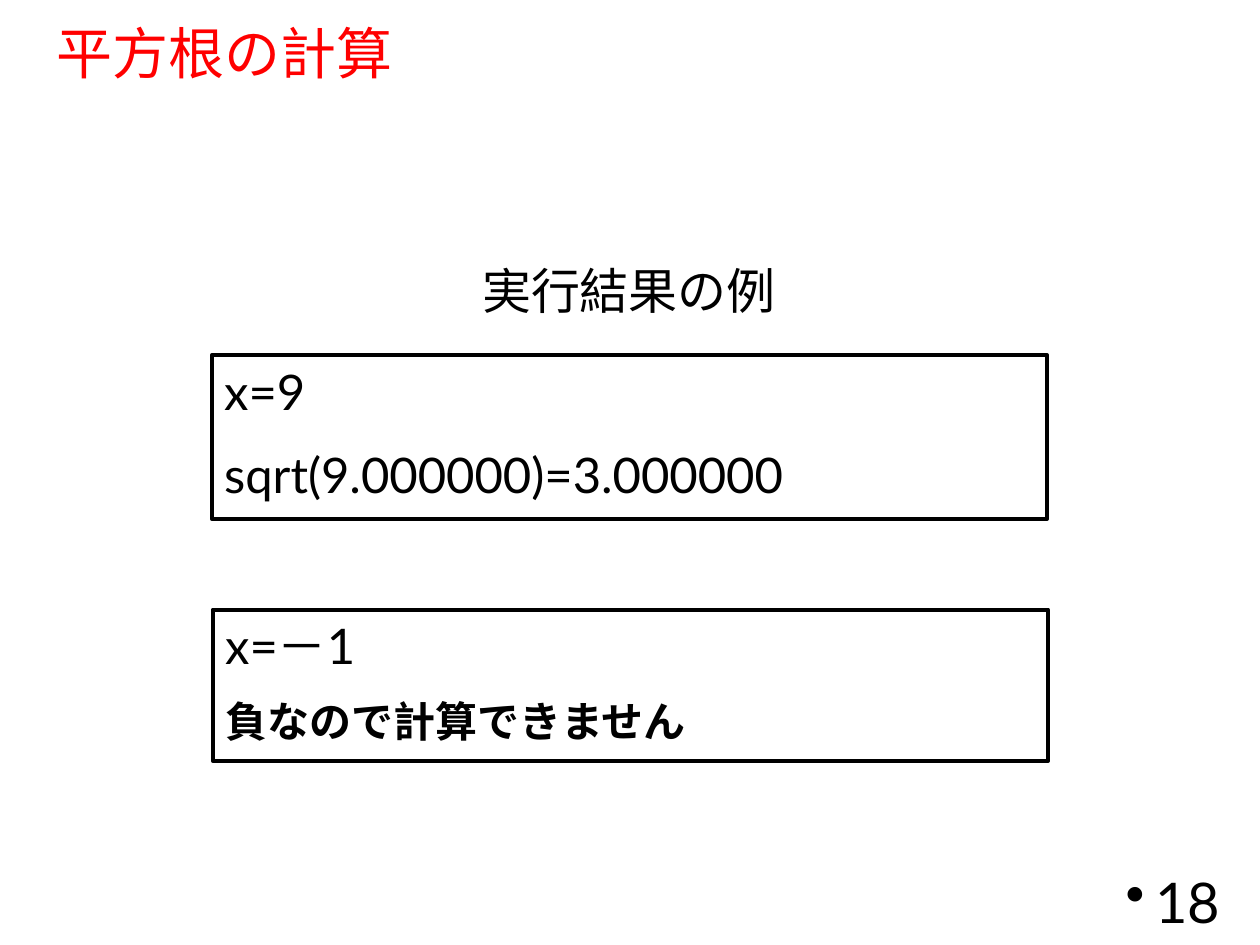
from dataclasses import dataclass

from lxml.etree import SubElement
from pptx import Presentation
from pptx.dml.color import RGBColor
from pptx.enum.shapes import MSO_SHAPE as Shape
from pptx.enum.text import MSO_ANCHOR as Anchor, PP_ALIGN as Align
from pptx.oxml.ns import qn
from pptx.util import Cm, Pt


@dataclass(frozen=True)
class Theme:
    font: str = "Lato"
    ink: RGBColor = RGBColor(0, 0, 0)
    accent: RGBColor = RGBColor(255, 0, 0)
    heading: int = 32
    body: int = 28
    message: int = 24
    border: float = 2.25


T = Theme()

TITLE = "平方根の計算"
CAPTION = "実行結果の例"
PAGE = "18"

# left, top, height in cm, then (text, size, bold) for each output line
BOX_WIDTH = 16.84
RESULTS = [
    (4.27, 7.16, 3.3, [("x=9", T.body, False),
                       ("sqrt(9.000000)=3.000000", T.body, False)]),
    (4.29, 12.29, 3.05, [("x=－1", T.body, False),
                         ("負なので計算できません", T.message, True)]),
]


def style(p, size, color=T.ink, bold=False):
    """Format every run, for Latin and East Asian characters alike."""
    for r in p.runs:
        r.font.name = T.font
        r.font.size = Pt(size)
        r.font.bold = bold
        r.font.color.rgb = color
        SubElement(r.font._element, qn("a:ea"), typeface=T.font)


def add_label(slide, box, text, size, color=T.ink, wrap=True, anchor=Anchor.MIDDLE):
    tf = slide.shapes.add_textbox(*map(Cm, box)).text_frame
    tf.word_wrap = wrap
    tf.vertical_anchor = anchor
    p = tf.paragraphs[0]
    p.text = text
    style(p, size, color)
    return p


def add_result(slide, left, top, height, lines):
    box = map(Cm, (left, top, BOX_WIDTH, height))
    sp = slide.shapes.add_shape(Shape.RECTANGLE, *box)
    sp.shadow.inherit = False
    sp.fill.background()
    sp.line.color.rgb = T.ink
    sp.line.width = Pt(T.border)
    tf = sp.text_frame
    tf.word_wrap = True
    tf.vertical_anchor = Anchor.TOP
    tf.text = "\n".join(text for text, _, _ in lines)
    for i, (p, (_, size, bold)) in enumerate(zip(tf.paragraphs, lines)):
        p.alignment = Align.LEFT
        if i:
            p.space_before = Pt(size / 2)
        style(p, size, bold=bold)


def main():
    prs = Presentation()
    prs.slide_width, prs.slide_height = Cm(25.4), Cm(19.05)
    slide = prs.slides.add_slide(prs.slide_layouts[6])

    title = add_label(slide, (0.89, 0.48, 23.5, 1.3), TITLE, T.heading, T.accent)
    title.line_spacing = 0.9

    page = add_label(slide, (19.13, 17.65, 5.72, 1.02), PAGE, T.heading)
    page.alignment = Align.RIGHT
    SubElement(page._p.get_or_add_pPr(), qn("a:buChar"), char="•")

    add_label(slide, (9.47, 5.13, 6.43, 1.45), CAPTION, T.body,
              wrap=False, anchor=Anchor.TOP)
    for result in RESULTS:
        add_result(slide, *result)

    prs.save("out.pptx")


if __name__ == "__main__":
    main()
